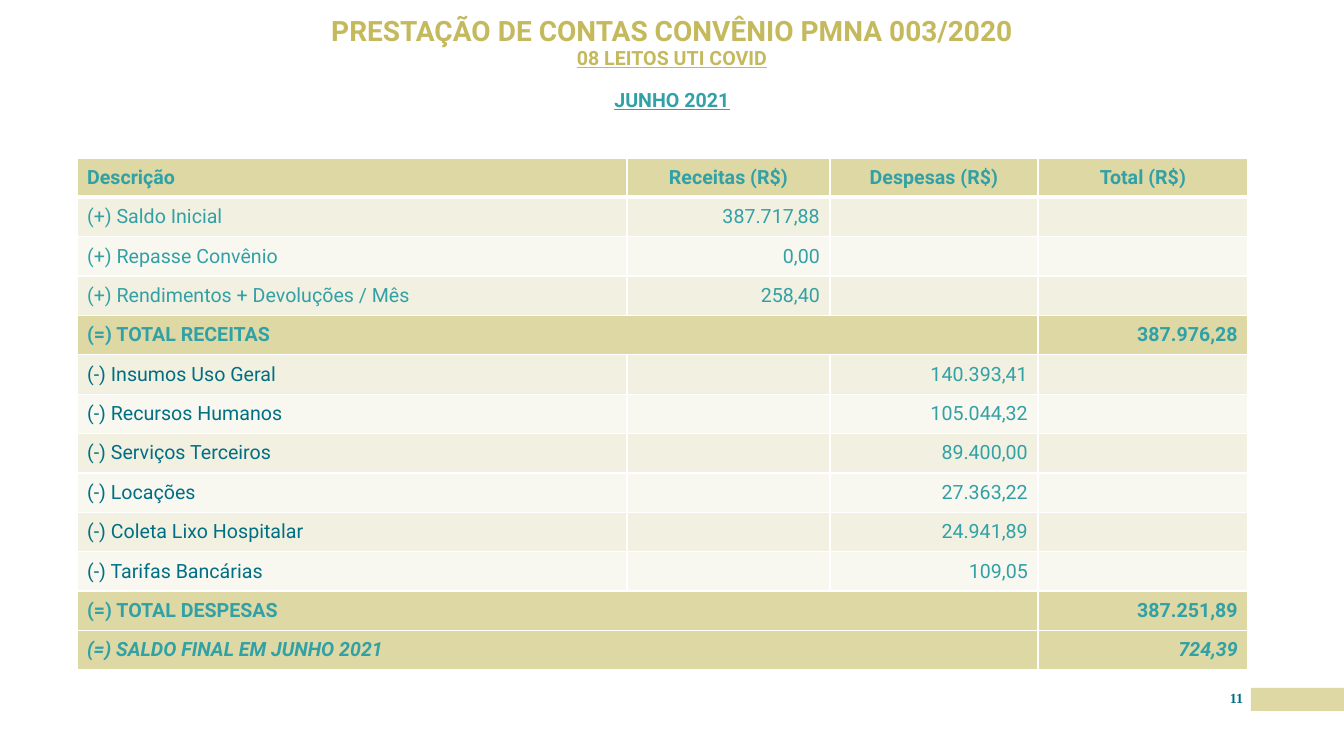
from lxml import etree
from pptx import Presentation
from pptx.dml.color import RGBColor
from pptx.enum.shapes import MSO_SHAPE
from pptx.enum.text import MSO_ANCHOR, MSO_AUTO_SIZE, PP_ALIGN
from pptx.oxml.ns import qn
from pptx.util import Pt

RECT = MSO_SHAPE.RECTANGLE
TOP, MIDDLE = MSO_ANCHOR.TOP, MSO_ANCHOR.MIDDLE
LEFT, CENTER, RIGHT = PP_ALIGN.LEFT, PP_ALIGN.CENTER, PP_ALIGN.RIGHT
FIXED = MSO_AUTO_SIZE.NONE

PX = 914400 / 100.8
THEME = {
    "gold": "C4BA5D", "sand": "DED8A4", "odd": "F2F0E0", "even": "F9F8F0",
    "teal": "32A1A6", "deep": "006F83", "white": "FFFFFF",
    "font": "Roboto", "serif": "Times New Roman",
    "head": Pt(20), "body": Pt(14), "small": Pt(10),
}


def write(par, text, color, align, **form):
    par.alignment = align
    run = par.add_run()
    run.text = text
    run.font.color.rgb = RGBColor.from_string(THEME[color])
    base = {"name": THEME["font"], "size": THEME["body"], "bold": True}
    for key, value in (base | form).items():
        setattr(run.font, key, value)


def edge(cell, side, width):
    """Draw one white border of a cell; side is L, R, T or B."""
    line = etree.SubElement(cell._tc.get_or_add_tcPr(), qn(f"a:ln{side}"), w=str(Pt(width)))
    fill = etree.SubElement(line, qn("a:solidFill"))
    etree.SubElement(fill, qn("a:srgbClr"), val=THEME["white"])


def box(*sides):
    return [round(side * PX) for side in sides]


deck = Presentation()
deck.slide_width, deck.slide_height = box(1344, 756)
slide = deck.slides.add_slide(deck.slide_layouts[5])

# Page mark
bar = slide.shapes.add_shape(RECT, *box(1251, 688, 93, 23))
bar.shadow.inherit = False
bar.fill.solid()
bar.fill.fore_color.rgb = RGBColor.from_string(THEME["sand"])
bar.line.fill.background()
page = slide.shapes.add_textbox(*box(1222, 690, 29, 25))

# Title
title = slide.shapes.title
title.left, title.top, title.width, title.height = box(0, 12, 1344, 153)
flush = {"margin_left": 0, "margin_right": 0, "margin_top": 0, "margin_bottom": 0,
         "word_wrap": True, "auto_size": FIXED, "vertical_anchor": TOP}
for frame in (page.text_frame, title.text_frame):
    for key, value in flush.items():
        setattr(frame, key, value)
title.text_frame.margin_top = box(5)[0]
write(page.text_frame.paragraphs[0], "11", "deep", CENTER,
      name=THEME["serif"], size=THEME["small"])

heads = [
    ("PRESTAÇÃO DE CONTAS CONVÊNIO PMNA 003/2020", "gold", 0, {"size": THEME["head"]}),
    ("08 LEITOS UTI COVID", "gold", 1, {"underline": True}),
    ("JUNHO 2021", "teal", 15, {"underline": True}),
]
for n, (text, color, gap, form) in enumerate(heads):
    par = title.text_frame.paragraphs[0] if n == 0 else title.text_frame.add_paragraph()
    par.line_spacing = 0.9
    par.space_before = Pt(gap)
    write(par, text, color, CENTER, **form)

# Accounts table
rows = [
    ("Descrição", "Receitas (R$)", "Despesas (R$)", "Total (R$)"),
    ("(+) Saldo Inicial", "387.717,88", "", ""),
    ("(+) Repasse Convênio", "0,00", "", ""),
    ("(+) Rendimentos + Devoluções / Mês", "258,40", "", ""),
    ("(=) TOTAL RECEITAS", "", "", "387.976,28"),
    ("(-) Insumos Uso Geral", "", "140.393,41", ""),
    ("(-) Recursos Humanos", "", "105.044,32", ""),
    ("(-) Serviços Terceiros", "", "89.400,00", ""),
    ("(-) Locações", "", "27.363,22", ""),
    ("(-) Coleta Lixo Hospitalar", "", "24.941,89", ""),
    ("(-) Tarifas Bancárias", "", "109,05", ""),
    ("(=) TOTAL DESPESAS", "", "", "387.251,89"),
    ("(=) SALDO FINAL EM JUNHO 2021", "", "", "724,39"),
]
widths = box(550, 203, 208, 210)
table = slide.shapes.add_table(len(rows), len(widths), *box(77, 158, 1171, 512)).table
table.first_row = table.horz_banding = False
for col, width in zip(table.columns, widths):
    col.width = width

for r, row in enumerate(rows):
    total = row[0].startswith("(=)")
    strong = r == 0 or total
    shade = "sand" if strong else "odd" if r % 2 else "even"
    for c, text in enumerate(row):
        cell = table.cell(r, c)
        cell.margin_top = cell.margin_bottom = 0
        cell.vertical_anchor = MIDDLE
        for side in "LRTB":
            thick = (r, side) in ((0, "B"), (1, "T"))
            edge(cell, side, 3 if thick else 1)
        cell.fill.solid()
        cell.fill.fore_color.rgb = RGBColor.from_string(THEME[shade])
        if text:
            color = "deep" if text.startswith("(-)") else "teal"
            align = LEFT if c == 0 else CENTER if r == 0 else RIGHT
            write(cell.text_frame.paragraphs[0], text, color, align,
                  bold=strong, italic=r == len(rows) - 1)
    if total:
        table.cell(r, 0).merge(table.cell(r, 2))

deck.save("out.pptx")
